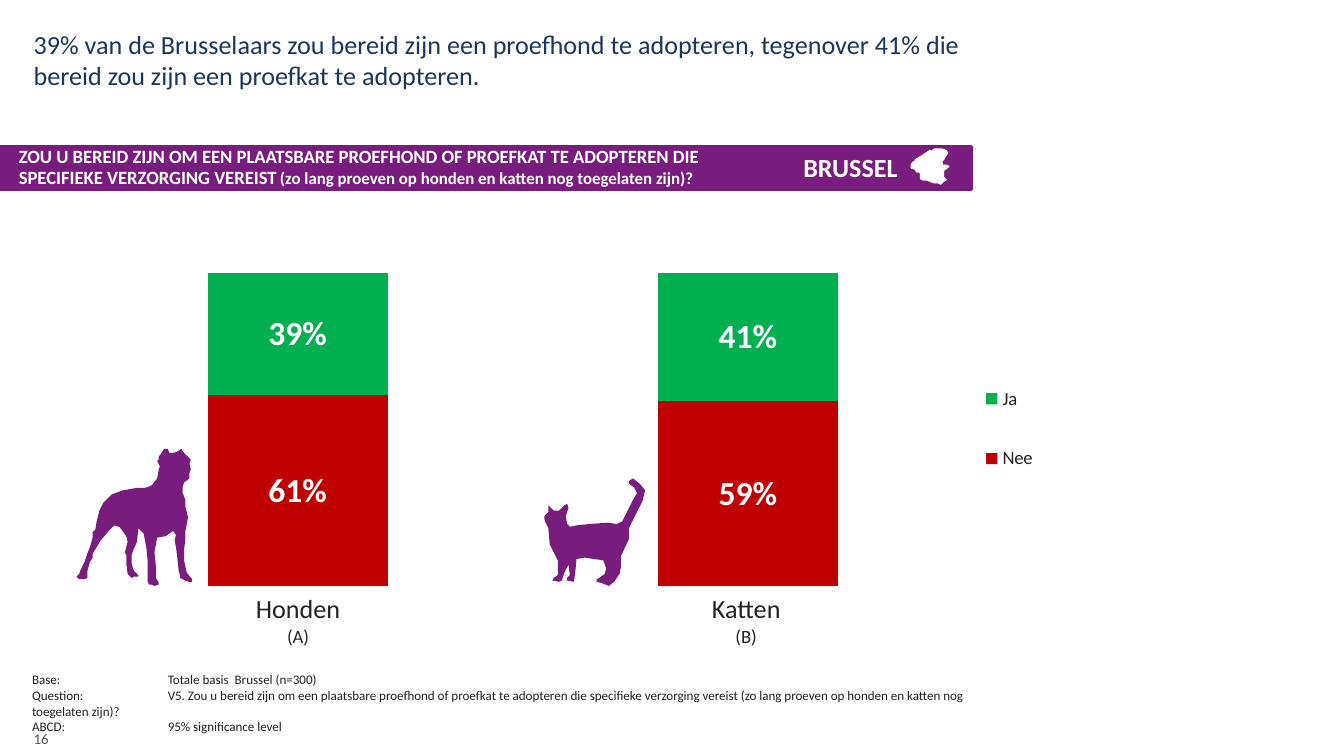
from dataclasses import dataclass

from lxml import etree
from pptx import Presentation
from pptx.chart.data import CategoryChartData
from pptx.dml.color import RGBColor
from pptx.enum.chart import XL_CHART_TYPE, XL_LEGEND_POSITION
from pptx.enum.shapes import MSO_SHAPE
from pptx.enum.text import MSO_ANCHOR, PP_ALIGN
from pptx.oxml.ns import qn
from pptx.util import Inches, Pt

STACKED = XL_CHART_TYPE.COLUMN_STACKED_100
LEGEND_RIGHT = XL_LEGEND_POSITION.RIGHT
RECT = MSO_SHAPE.RECTANGLE
BOTTOM = MSO_ANCHOR.BOTTOM
CENTER, RIGHT = PP_ALIGN.CENTER, PP_ALIGN.RIGHT


@dataclass(frozen=True)
class Theme:
    font: str = "Calibri"
    purple: str = "781D7E"
    navy: str = "1B365D"
    ink: str = "222223"
    gray: str = "58585B"
    white: str = "FFFFFF"
    red: str = "C00000"
    green: str = "00B050"
    value: int = 18
    head: int = 14
    body: int = 10
    note: int = 9
    small: int = 8
    foot: int = 7


T = Theme()
PERCENT = r"0\%"

# Outlines in hundredths of an inch from the top left of each figure
DOG = [
    (84, 99), (86, 99), (86, 97), (82, 92), (80, 83), (80, 75), (81, 67), (81, 61),
    (83, 51), (81, 43), (81, 38), (79, 33), (79, 28), (80, 25), (84, 22), (84, 18),
    (85, 15), (84, 11), (85, 8), (82, 5), (80, 3), (78, 0), (75, 2), (72, 3), (69, 3),
    (68, 0), (65, 0), (64, 2), (61, 6), (61, 8), (60, 9), (62, 13), (61, 16), (60, 22),
    (56, 27), (54, 28), (51, 29), (45, 29), (34, 31), (26, 34), (20, 40), (17, 46),
    (15, 54), (14, 60), (12, 62), (12, 66), (10, 73), (8, 78), (6, 84), (3, 90),
    (2, 93), (0, 95), (2, 97), (6, 97), (8, 96), (8, 91), (10, 84), (12, 81), (12, 78),
    (18, 68), (24, 61), (28, 57), (32, 58), (37, 65), (38, 69), (36, 77), (37, 79),
    (37, 85), (38, 93), (41, 96), (43, 95), (46, 95), (46, 94), (43, 91), (42, 89),
    (41, 85), (41, 79), (42, 76), (45, 69), (46, 59), (50, 63), (52, 74), (53, 84),
    (53, 99), (54, 101), (56, 101), (58, 102), (61, 101), (61, 99), (59, 96), (59, 87),
    (58, 77), (60, 66), (66, 65), (72, 61), (74, 64), (73, 68), (74, 73), (75, 81),
    (76, 91), (77, 94), (77, 96), (79, 97), (81, 98),
]
CAT = [
    (45, 71), (46, 67), (44, 61), (37, 60), (30, 59), (24, 60), (23, 70), (22, 77),
    (17, 76), (17, 74), (19, 72), (18, 64), (15, 70), (13, 76), (11, 77), (6, 76),
    (7, 74), (10, 72), (10, 61), (4, 49), (3, 37), (1, 33), (0, 30), (0, 28), (3, 25),
    (3, 20), (7, 24), (11, 24), (15, 20), (17, 19), (18, 22), (16, 28), (17, 34),
    (19, 36), (24, 35), (33, 34), (47, 33), (54, 34), (58, 32), (66, 16), (69, 11),
    (67, 7), (63, 4), (63, 2), (66, 0), (71, 4), (75, 9), (73, 17), (67, 29), (63, 37),
    (63, 45), (57, 58), (57, 66), (56, 71), (52, 77), (48, 80), (43, 78), (39, 77),
    (39, 75), (41, 74),
]
REGION = [
    (3, 8), (3, 9), (1, 10), (0, 12), (0, 14), (3, 15), (4, 17), (6, 17), (7, 18),
    (7, 22), (9, 23), (12, 23), (14, 24), (17, 25), (20, 25), (22, 26), (24, 24),
    (26, 23), (24, 21), (24, 16), (28, 13), (26, 12), (23, 12), (23, 10), (22, 9),
    (24, 8), (25, 6), (27, 3), (26, 1), (23, 0), (17, 0), (15, 2), (14, 1), (11, 3),
    (8, 5),
]


def rgb(code):
    return RGBColor.from_string(code)


def style(font, size, color, bold=False):
    font.name, font.size, font.bold = T.font, Pt(size), bold
    font.color.rgb = rgb(color)


def write(para, text, size, color, bold=False):
    """Add a run; each newline in the text becomes a line break."""
    for i, line in enumerate(text.split("\n")):
        if i:
            para.add_line_break()
        if line:
            run = para.add_run()
            run.text = line
            style(run.font, size, color, bold)


def text_box(slide, x, y, w, h, inset=False, wrap=True):
    frame = slide.shapes.add_textbox(Inches(x), Inches(y), Inches(w), Inches(h)).text_frame
    frame.word_wrap = wrap
    if not inset:
        frame.margin_left = frame.margin_right = 0
        frame.margin_top = frame.margin_bottom = 0
    return frame


def paint(shape, color, width=0):
    shape.shadow.inherit = False
    shape.fill.solid()
    shape.fill.fore_color.rgb = rgb(color)
    if width:
        shape.line.color.rgb = rgb(color)
        shape.line.width = Pt(width)
    else:
        shape.line.fill.background()


def figure(slide, points, x, y, color, width=0):
    pen = slide.shapes.build_freeform(*points[0], scale=Inches(0.01))
    pen.add_line_segments(points[1:], close=True)
    paint(pen.convert_to_shape(Inches(x), Inches(y)), color, width)


def heading(slide, x, y, w, h):
    para = text_box(slide, x, y, w, h).paragraphs[0]
    write(para, "39% van de Brusselaars zou bereid zijn een proefhond te adopteren, "
          "tegenover 41% die bereid zou zijn een proefkat te adopteren.", T.head, T.navy)


def banner(slide, x, y, w, h):
    bar = slide.shapes.add_shape(RECT, Inches(x), Inches(y), Inches(w), Inches(h))
    paint(bar, T.purple, 2)
    para = text_box(slide, x + 0.14, y + 0.01, 5.47, 0.29).paragraphs[0]
    para.line_spacing = 0.9
    write(para, "ZOU U BEREID ZIJN OM EEN PLAATSBARE PROEFHOND OF PROEFKAT TE ADOPTEREN "
          "DIE SPECIFIEKE VERZORGING VEREIST", T.body, T.white, True)
    write(para, " ", T.small, T.gray)
    write(para, "(zo lang proeven op honden en katten nog toegelaten zijn)?",
          T.note, T.white, True)
    place = text_box(slide, x + 4.96, y + 0.04, 1.72, 0.24).paragraphs[0]
    place.alignment = RIGHT
    write(place, "BRUSSEL", T.head, T.white, True)
    figure(slide, REGION, x + 6.78, y + 0.02, T.white, 0.75)


def layout(parent, spot, box, size, inner=False):
    """Fix a chart part at a box in inches within a chart of the given size."""
    for old in parent.findall(qn("c:layout")):
        parent.remove(old)
    node = etree.Element(qn("c:layout"))
    manual = etree.SubElement(node, qn("c:manualLayout"))
    parts = [("layoutTarget", "inner")] if inner else []
    parts += [("xMode", "edge"), ("yMode", "edge")]
    parts += [(tag, v / full) for tag, v, full in zip("xywh", box, size * 2)]
    for tag, val in parts:
        etree.SubElement(manual, qn("c:" + tag)).set("val", str(val))
    parent.insert(spot, node)


def bars(slide, x, y, w, h):
    data = CategoryChartData(number_format=PERCENT)
    data.categories = ["1", "2"]
    data.add_series("Nee", [61, 59])
    data.add_series("Ja", [39, 41])
    chart = slide.shapes.add_chart(
        STACKED, Inches(x), Inches(y), Inches(w), Inches(h), data).chart
    style(chart.font, T.value, T.ink)
    chart.has_title = False
    axis = chart.value_axis
    axis.minimum_scale, axis.maximum_scale = 0, 1
    axis.has_major_gridlines = False
    axis.visible = chart.category_axis.visible = False
    plot = chart.plots[0]
    plot.gap_width, plot.overlap, plot.vary_by_categories = 150, 100, False
    for series, color in zip(plot.series, (T.red, T.green)):
        series.format.fill.solid()
        series.format.fill.fore_color.rgb = rgb(color)
        labels = series.data_labels
        labels.show_value = True
        labels.number_format, labels.number_format_is_linked = PERCENT, False
        style(labels.font, T.value, T.white, True)
    chart.has_legend = True
    chart.legend.position = LEGEND_RIGHT
    chart.legend.include_in_layout = False
    style(chart.legend.font, T.body, T.ink)
    layout(chart.legend._element, 1, (6.98, 0.57, 0.5, 1.18), (w, h))
    area = next(chart._chartSpace.iter(qn("c:plotArea")))
    layout(area, 0, (0.26, 0, 6.7, 2.33), (w, h), inner=True)


def names(slide, x, y, w, h):
    table = slide.shapes.add_table(1, 2, Inches(x), Inches(y), Inches(w), Inches(h)).table
    table.first_row = table.horz_banding = False
    for cell, (name, code) in zip(table.rows[0].cells, (("Honden", "(A)"), ("Katten", "(B)"))):
        cell.fill.background()
        para = cell.text_frame.paragraphs[0]
        para.alignment = CENTER
        write(para, name + "\n", T.head, T.ink)
        write(para, code, T.body, T.ink)


def footer(slide, x, y, w, h):
    frame = text_box(slide, x, y, w, h, inset=True)
    base, question = frame.paragraphs[0], frame.add_paragraph()
    for para in (base, question):
        tabs = etree.SubElement(para._p.get_or_add_pPr(), qn("a:tabLst"))
        etree.SubElement(tabs, qn("a:tab"), pos=str(Inches(1.01)), algn="l")
    write(base, "Base:\tTotale basis  Brussel (n=300)", T.foot, T.ink)
    write(question, "Question:\tV5. Zou u bereid zijn om een plaatsbare proefhond "
          "of proefkat te adopteren die specifieke verzorging vereist (zo lang proeven op "
          "honden en katten nog \ttoegelaten zijn)?\nABCD:\t95% significance level",
          T.foot, T.ink)
    page = text_box(slide, x + 0.11, y + 0.35, 0.34, 0.26, wrap=False)
    page.vertical_anchor = BOTTOM
    page.paragraphs[0].line_spacing = 0.85
    write(page.paragraphs[0], "16", T.small, T.gray)


def main():
    deck = Presentation()
    deck.slide_width, deck.slide_height = Inches(10), Inches(10) * 9 // 16
    slide = deck.slides.add_slide(deck.slide_layouts[6])
    heading(slide, 0.25, 0.21, 7, 0.59)
    banner(slide, 0, 1.09, 7.23, 0.32)
    figure(slide, DOG, 0.57, 3.34, T.purple)
    figure(slide, CAT, 4.05, 3.56, T.purple)
    bars(slide, 0.28, 2.03, 9.72, 2.39)
    names(slide, 0.55, 4.37, 6.67, 0.5)
    footer(slide, 0.14, 4.95, 7.45, 0.35)
    deck.save("out.pptx")


if __name__ == "__main__":
    main()
